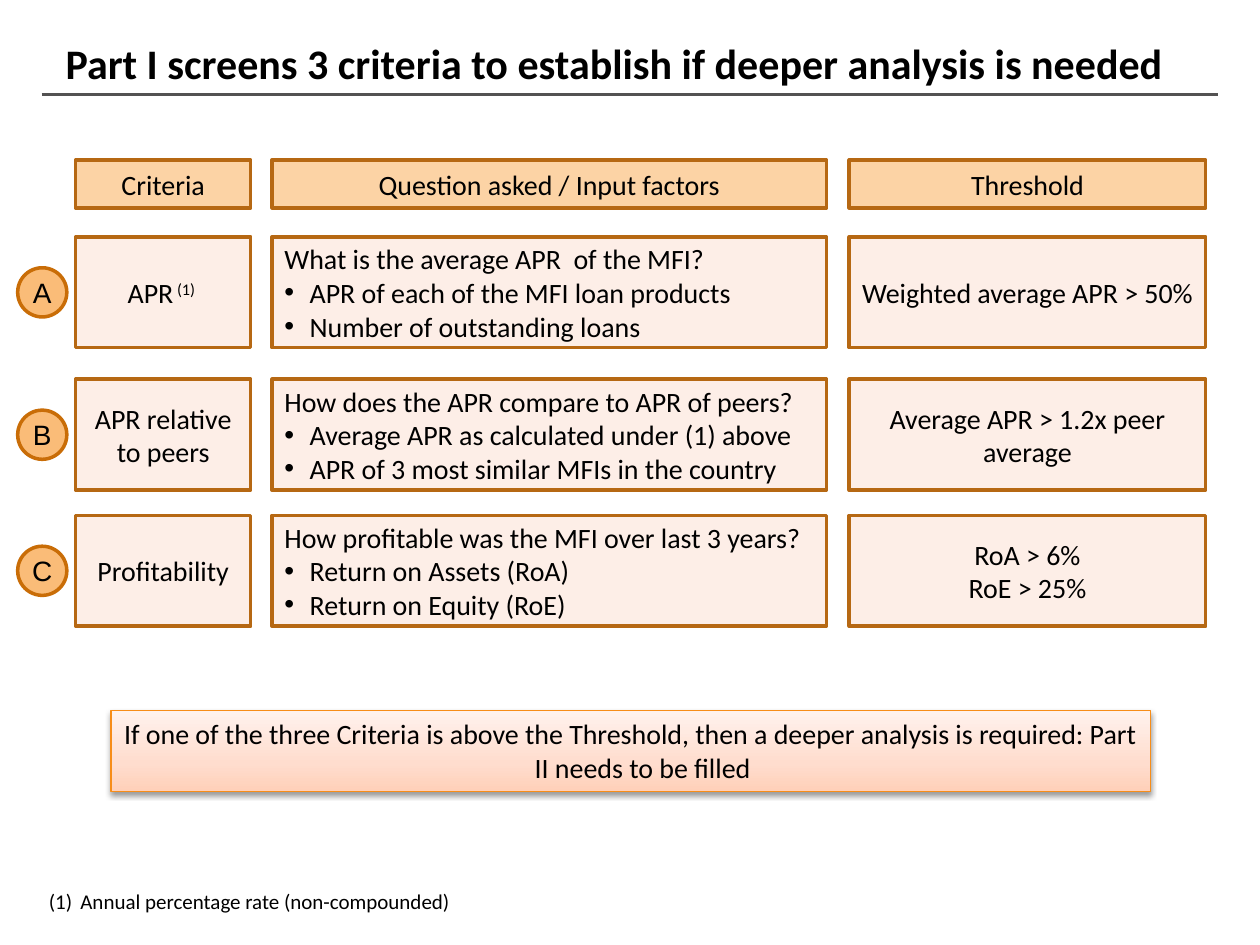
from copy import deepcopy

from lxml.etree import SubElement as Sub
from pptx import Presentation
from pptx.dml.color import RGBColor
from pptx.enum.shapes import MSO_CONNECTOR as Link, MSO_SHAPE as Kind
from pptx.enum.text import MSO_ANCHOR as Anchor, MSO_AUTO_SIZE as Fit, PP_ALIGN as Align
from pptx.oxml.ns import qn
from pptx.util import Inches, Pt

COLS = [(0.6, 1.39), (2.16, 4.4), (6.74, 2.83)]
HEADS = ["Criteria", "Question asked / Input factors", "Threshold"]
HEAD_TOP, HEAD_H, ROW_H, DOT = 1.27, 0.38, 0.88, 0.39
ROWS = [
    ("A", 1.88, ["APR"],
     ["What is the average APR  of the MFI?",
      "APR of each of the MFI loan products",
      "Number of outstanding loans"],
     ["Weighted average APR > 50%"]),
    ("B", 3.01, ["APR relative to peers"],
     ["How does the APR compare to APR of peers?",
      "Average APR as calculated under (1) above",
      "APR of 3 most similar MFIs in the country"],
     ["Average APR > 1.2x peer average"]),
    ("C", 4.09, ["Profitability"],
     ["How profitable was the MFI over last 3 years?",
      "Return on Assets (RoA)",
      "Return on Equity (RoE)"],
     ["RoA > 6%", "RoE > 25%"]),
]


def color(code):
    return RGBColor.from_string(code)


def style(para, size=16, name="Calibri", align=Align.CENTER, bold=False):
    para.alignment = align
    font = para.font
    font.size, font.name, font.bold = Pt(size), name, bold
    font.color.rgb = color("000000")


def indent(para, width, mark=None):
    """Hang the first line by width, with a bullet mark if one is given."""
    props = para._p.get_or_add_pPr()
    props.set("marL", str(Inches(width)))
    props.set("indent", str(-Inches(width)))
    if mark:
        Sub(props, qn("a:buFont")).set("typeface", "Arial")
        Sub(props, qn("a:buChar")).set("char", mark)


def write(shape, lines, **look):
    frame = shape.text_frame
    frame.text = "\n".join(lines)
    for para in frame.paragraphs:
        style(para, **look)
    return frame


def add_box(slide, kind, place, fill, line=None, weight=2):
    shape = slide.shapes.add_shape(kind, *map(Inches, place))
    shape.shadow.inherit = False
    if fill:
        shape.fill.solid()
        shape.fill.fore_color.rgb = color(fill)
    if line:
        shape.line.color.rgb = color(line)
        shape.line.width = Pt(weight)
    else:
        shape.line.fill.background()
    return shape


def add_cell(slide, col, top, height, fill, lines, align=Align.CENTER):
    left, width = COLS[col]
    shape = add_box(slide, Kind.RECTANGLE, (left, top, width, height), fill, "B66813")
    return write(shape, lines, align=align)


def add_row(slide, mark, top, name, ask, limit):
    add_cell(slide, 0, top, ROW_H, "FDEEE7", name)
    frame = add_cell(slide, 1, top, ROW_H, "FDEEE7", ask, Align.LEFT)
    for para in frame.paragraphs[1:]:
        indent(para, 0.2, "•")
    add_cell(slide, 2, top, ROW_H, "FDEEE7", limit)
    place = (0.14, top + (ROW_H - DOT) / 2, DOT, DOT)
    dot = add_box(slide, Kind.OVAL, place, "FABC78", "C96D07")
    write(dot, [mark], name="Arial").word_wrap = False


def add_title(slide):
    title = slide.shapes.title
    title.left, title.top, title.width, title.height = map(Inches, (0.42, 0.25, 9.27, 0.5))
    frame = write(title, ["Part I screens 3 criteria to establish if deeper analysis is needed"],
                  size=24, align=Align.LEFT, bold=True)
    frame.auto_size = Fit.NONE
    frame.vertical_anchor = Anchor.MIDDLE
    rule = slide.shapes.add_connector(Link.STRAIGHT, *map(Inches, (0.33, 0.75, 9.67, 0.75)))
    rule.line.color.rgb = color("535252")
    rule.line.width = Pt(2.25)
    Sub(rule._element.spPr, qn("a:effectLst"))


def shade(shape, stops):
    """Fill from bottom to top with three colour stops."""
    fill = shape.fill
    fill.gradient()
    fill.gradient_angle = 90
    first = shape._element.spPr.find(".//" + qn("a:gs"))
    first.addnext(deepcopy(first))
    for stop, (spot, code) in zip(fill.gradient_stops, stops):
        stop.position = spot
        stop.color.rgb = color(code)


def cast(shape):
    """Give the shape a soft shadow below it."""
    effects = shape._element.spPr.find(qn("a:effectLst"))
    drop = Sub(effects, qn("a:outerShdw"), blurRad=str(Pt(3.1)), dist=str(Pt(1.6)),
               dir="5400000", rotWithShape="0")
    tint = Sub(drop, qn("a:srgbClr"), val="000000")
    Sub(tint, qn("a:alpha"), val="38000")


def add_banner(slide):
    shape = add_box(slide, Kind.RECTANGLE, (0.88, 5.64, 8.25, 0.64), None, "F78D18", 0.75)
    shade(shape, [(0, "FFD0B9"), (0.35, "FFDDCE"), (1, "FFF2ED")])
    cast(shape)
    frame = write(shape, ["If one of the three Criteria is above the Threshold, "
                          "then a deeper analysis is required: Part II needs to be filled"])
    frame.vertical_anchor = Anchor.TOP
    frame.auto_size = Fit.SHAPE_TO_FIT_TEXT
    para = frame.paragraphs[0]
    para.space_before = Pt(12)
    indent(para, 0.19)


def add_note(slide):
    shape = add_box(slide, Kind.RECTANGLE, (0.29, 7, 3.4, 0.3), "FFFFFF")
    frame = write(shape, ["Annual percentage rate (non-compounded)"], size=12, align=Align.LEFT)
    frame.vertical_anchor = Anchor.TOP
    frame.auto_size = Fit.SHAPE_TO_FIT_TEXT
    para = frame.paragraphs[0]
    indent(para, 0.25)
    Sub(para._p.get_or_add_pPr(), qn("a:buAutoNum")).set("type", "arabicParenBoth")


def add_mark(slide):
    """Set the raised note number after the first criterion."""
    for shape in slide.shapes:
        if shape.text_frame.text == "APR" if shape.has_text_frame else False:
            run = shape.text_frame.paragraphs[0].add_run()
            run.text = " (1) "
            run._r.get_or_add_rPr().set("baseline", "30000")


def main():
    deck = Presentation()
    deck.slide_width, deck.slide_height = Inches(10), Inches(7.5)
    slide = deck.slides.add_slide(deck.slide_layouts[5])
    add_title(slide)
    for col, head in enumerate(HEADS):
        add_cell(slide, col, HEAD_TOP, HEAD_H, "FCD3A5", [head])
    for row in ROWS:
        add_row(slide, *row)
    add_mark(slide)
    add_banner(slide)
    add_note(slide)
    deck.save("out.pptx")


if __name__ == "__main__":
    main()
